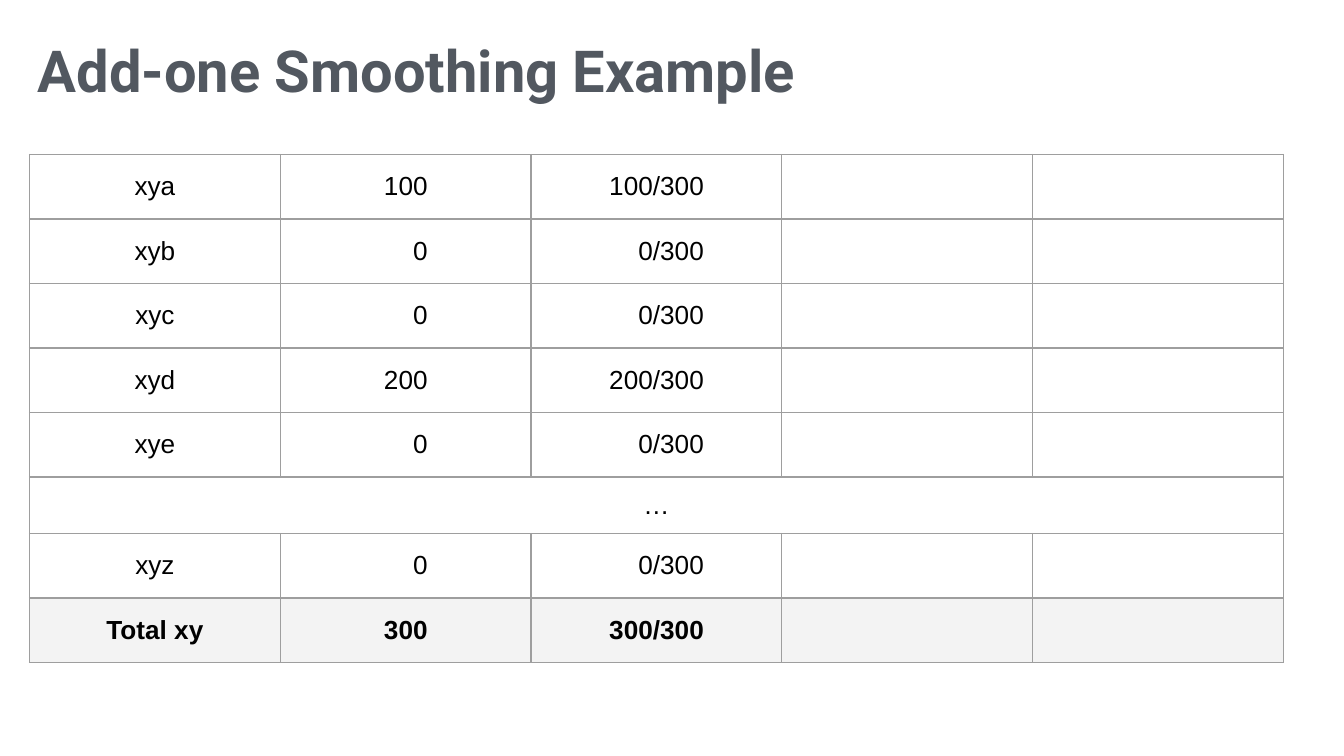
from typing import NamedTuple

from lxml import etree
from pptx import Presentation
from pptx.dml.color import RGBColor
from pptx.enum.text import MSO_ANCHOR, MSO_AUTO_SIZE, PP_ALIGN
from pptx.oxml.ns import qn
from pptx.util import Inches, Pt

TITLE_COLOR = RGBColor(0x52, 0x58, 0x60)
TEXT_COLOR = RGBColor(0x00, 0x00, 0x00)
TOTAL_FILL = RGBColor(0xF3, 0xF3, 0xF3)
WHITE = RGBColor(0xFF, 0xFF, 0xFF)
BORDER_COLOR = RGBColor(0x9E, 0x9E, 0x9E)
BORDER_WIDTH = Pt(0.75)

TOP, MIDDLE = MSO_ANCHOR.TOP, MSO_ANCHOR.MIDDLE
LEFT, CENTER, RIGHT = PP_ALIGN.LEFT, PP_ALIGN.CENTER, PP_ALIGN.RIGHT
NO_AUTOFIT = MSO_AUTO_SIZE.NONE

COLUMNS, TABLE_WIDTH = 5, 9.33
ROW_HEIGHT, GAP_ROW_HEIGHT = 0.48, 0.42
PADDING = 0.1
# Right padding that lines up the digits of the count and fraction columns
NUMBER_PADDING = {1: 0.77, 2: 0.58}


class Row(NamedTuple):
    label: str
    count: int = 0
    total: bool = False
    gap: bool = False


ROWS = [
    Row("xya", 100), Row("xyb"), Row("xyc"), Row("xyd", 200), Row("xye"),
    Row("…", gap=True), Row("xyz"), Row("Total xy", 300, total=True),
]
TOTAL = ROWS[-1].count


def add_borders(cell) -> None:
    tcPr = cell._tc.get_or_add_tcPr()
    for index, side in enumerate(("lnL", "lnR", "lnT", "lnB")):
        ln = etree.Element(qn(f"a:{side}"), w=str(BORDER_WIDTH))
        fill = etree.SubElement(ln, qn("a:solidFill"))
        etree.SubElement(fill, qn("a:srgbClr"), val=str(BORDER_COLOR))
        tcPr.insert(index, ln)


def format_cell(cell, fill: RGBColor) -> None:
    cell.fill.solid()
    cell.fill.fore_color.rgb = fill
    cell.vertical_anchor = MIDDLE
    cell.margin_left = cell.margin_right = Inches(PADDING)
    cell.margin_top = cell.margin_bottom = Inches(PADDING)
    add_borders(cell)


def write_cell(cell, text: str, column: int, bold: bool) -> None:
    cell.text = text
    p = cell.text_frame.paragraphs[0]
    p.alignment = CENTER
    if column in NUMBER_PADDING:
        p.alignment = RIGHT
        cell.margin_right = Inches(NUMBER_PADDING[column])
    font = p.runs[0].font
    font.name, font.size, font.bold = "Arial", Pt(14), bold
    font.color.rgb = TEXT_COLOR


def add_title(s, text: str) -> None:
    title = s.shapes.title
    title.left, title.top = Inches(0.22), Inches(0.2)
    title.width, title.height = Inches(9.53), Inches(0.49)
    tf = title.text_frame
    tf.text = text
    tf.word_wrap, tf.auto_size, tf.vertical_anchor = True, NO_AUTOFIT, TOP
    tf.margin_left = tf.margin_right = Inches(0.06)
    tf.margin_top = tf.margin_bottom = Inches(0.06)
    p = tf.paragraphs[0]
    p.alignment = LEFT
    font = p.runs[0].font
    font.name, font.size, font.bold = "Roboto", Pt(31), True
    font.color.rgb = TITLE_COLOR


def add_counts_table(s, rows: list[Row]) -> None:
    heights = [GAP_ROW_HEIGHT if row.gap else ROW_HEIGHT for row in rows]
    # Columns share the table width equally
    table = s.shapes.add_table(
        len(rows), COLUMNS, Inches(0.22), Inches(1.15),
        Inches(TABLE_WIDTH), Inches(sum(heights))).table
    table.first_row = table.horz_banding = False
    for i, (row, height) in enumerate(zip(rows, heights)):
        table.rows[i].height = Inches(height)
        for j in range(COLUMNS):
            cell = table.cell(i, j)
            format_cell(cell, TOTAL_FILL if row.total else WHITE)
            cell.text_frame.paragraphs[0].font.size = Pt(14)
        texts = [row.label]
        if row.gap:
            table.cell(i, 0).merge(table.cell(i, COLUMNS - 1))
        else:
            texts += [str(row.count), f"{row.count}/{TOTAL}"]
        for j, text in enumerate(texts):
            write_cell(table.cell(i, j), text, j, row.total)


def main() -> None:
    prs = Presentation()
    # Widescreen, 16:9
    prs.slide_width = Inches(10)
    prs.slide_height = prs.slide_width * 9 // 16
    s = prs.slides.add_slide(prs.slide_layouts[5])  # Title Only
    add_title(s, "Add-one Smoothing Example")
    add_counts_table(s, ROWS)
    prs.save("out.pptx")


if __name__ == "__main__":
    main()
